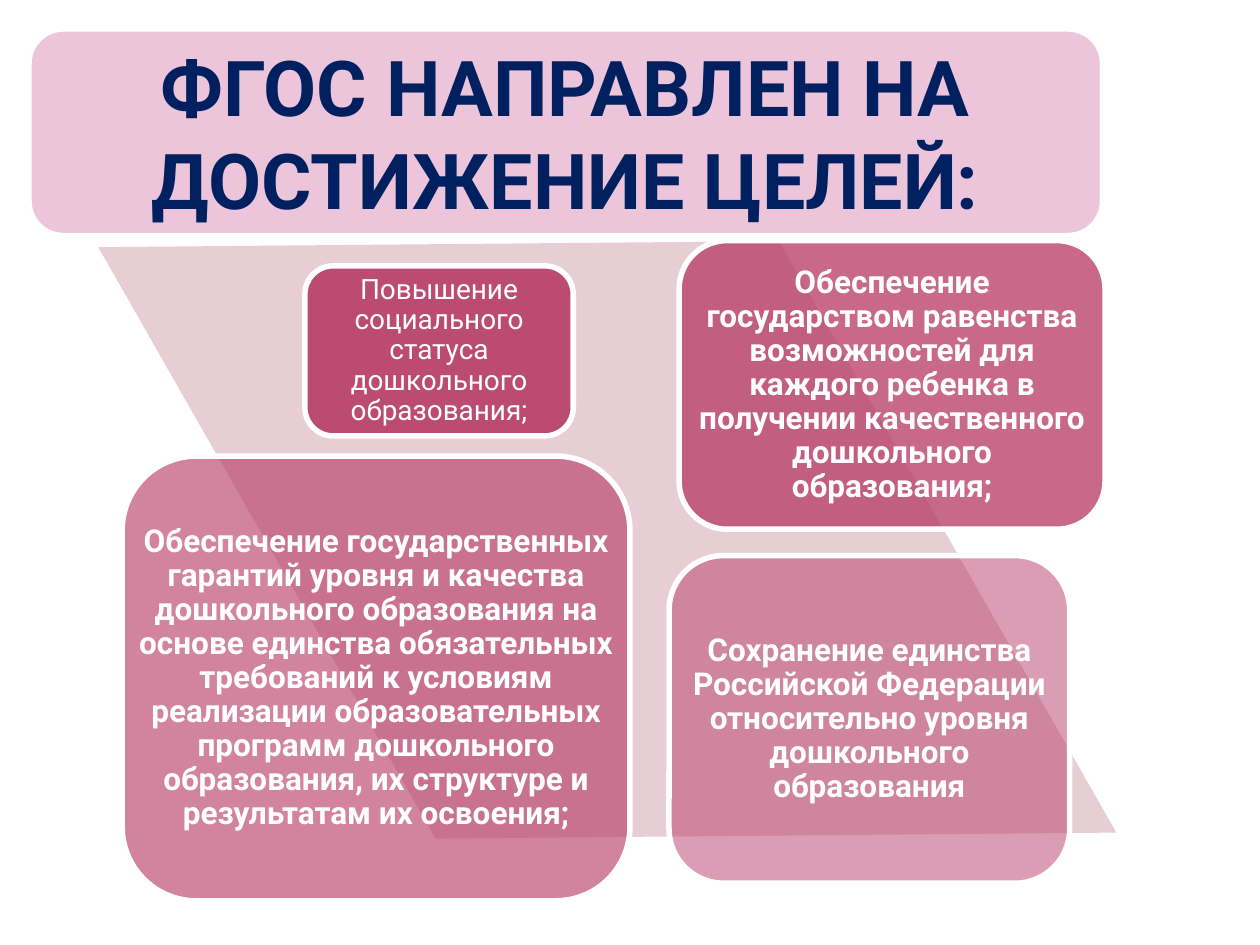
from lxml.etree import SubElement
from pptx import Presentation
from pptx.dml.color import RGBColor
from pptx.enum.shapes import MSO_SHAPE
from pptx.enum.text import MSO_ANCHOR, PP_ALIGN
from pptx.oxml.ns import qn
from pptx.util import Inches, Pt

FONT = "Roboto"
COLORS = {
    "title_fill": "ECC5DB",
    "title_text": "002060",
    "diamond": "E6CED4",
    "goal": "B83D68",
    "white": "FFFFFF",
}

# left, top, width, height, opacity in percent, text size, bold, text
GOALS = [
    (2.42, 2.11, 2.13, 1.35, 90, 16, False,
     "Повышение социального статуса дошкольного образования;"),
    (5.39, 1.91, 3.38, 2.29, 77, 18, True,
     "Обеспечение государством равенства возможностей для каждого ребенка "
     "в получении качественного дошкольного образования;"),
    (0.97, 3.62, 4.03, 3.53, 63, 18, True,
     "Обеспечение государственных гарантий уровня и качества дошкольного "
     "образования на основе единства обязательных требований к условиям "
     "реализации образовательных программ дошкольного образования, "
     "их структуре и результатам их освоения;"),
    (5.31, 4.41, 3.18, 2.6, 50, 18, True,
     "Сохранение единства Российской Федерации относительно уровня "
     "дошкольного образования"),
]


def rgb(name):
    return RGBColor.from_string(COLORS[name])


def add_shape(s, kind, box, fill, outlined=True):
    sp = s.shapes.add_shape(kind, *map(Inches, box))
    sp.shadow.inherit = False
    sp.fill.solid()
    sp.fill.fore_color.rgb = rgb(fill)
    if outlined:
        sp.line.color.rgb = rgb("white")
        sp.line.width = Pt(3.15)
    else:
        sp.line.fill.background()
    return sp


def set_opacity(sp, percent):
    color = sp.fill._xPr.find(qn("a:solidFill"))[0]
    SubElement(color, qn("a:alpha"), val=str(percent * 1000))


def write_text(sp, text, size, color, bold):
    """Fill a shape with one centred, wrapped paragraph."""
    tf = sp.text_frame
    tf.word_wrap = True
    tf.vertical_anchor = MSO_ANCHOR.MIDDLE
    p = tf.paragraphs[0]
    p.alignment = PP_ALIGN.CENTER
    r = p.add_run()
    r.text = text
    r.font.name = FONT
    r.font.size = Pt(size)
    r.font.bold = bold
    r.font.color.rgb = rgb(color)
    return tf


def add_title(s):
    sp = add_shape(s, MSO_SHAPE.ROUNDED_RECTANGLE, (0.23, 0.23, 8.52, 1.64), "title_fill")
    write_text(sp, "ФГОС НАПРАВЛЕН НА ДОСТИЖЕНИЕ ЦЕЛЕЙ:", 44, "title_text", True)


def add_diamond(s):
    sp = add_shape(s, MSO_SHAPE.DIAMOND, (0.16, 1.55, 9.32, 5.47), "diamond", outlined=False)
    sp.rotation = 29.9


def add_goal(s, box, opacity, size, bold, text):
    """Translucent card with a text box over its full area."""
    card = add_shape(s, MSO_SHAPE.ROUNDED_RECTANGLE, box, "goal")
    set_opacity(card, opacity)
    label = s.shapes.add_textbox(*map(Inches, box))
    tf = write_text(label, text, size, "white", bold)
    tf.margin_left = tf.margin_right = tf.margin_top = tf.margin_bottom = Inches(0.07)
    tf.paragraphs[0].line_spacing = 0.9


def main():
    prs = Presentation()
    prs.slide_width, prs.slide_height = Inches(10), Inches(7.5)
    s = prs.slides.add_slide(prs.slide_layouts[6])
    add_title(s)
    add_diamond(s)
    for *box, opacity, size, bold, text in GOALS:
        add_goal(s, box, opacity, size, bold, text)
    prs.save("out.pptx")


if __name__ == "__main__":
    main()
